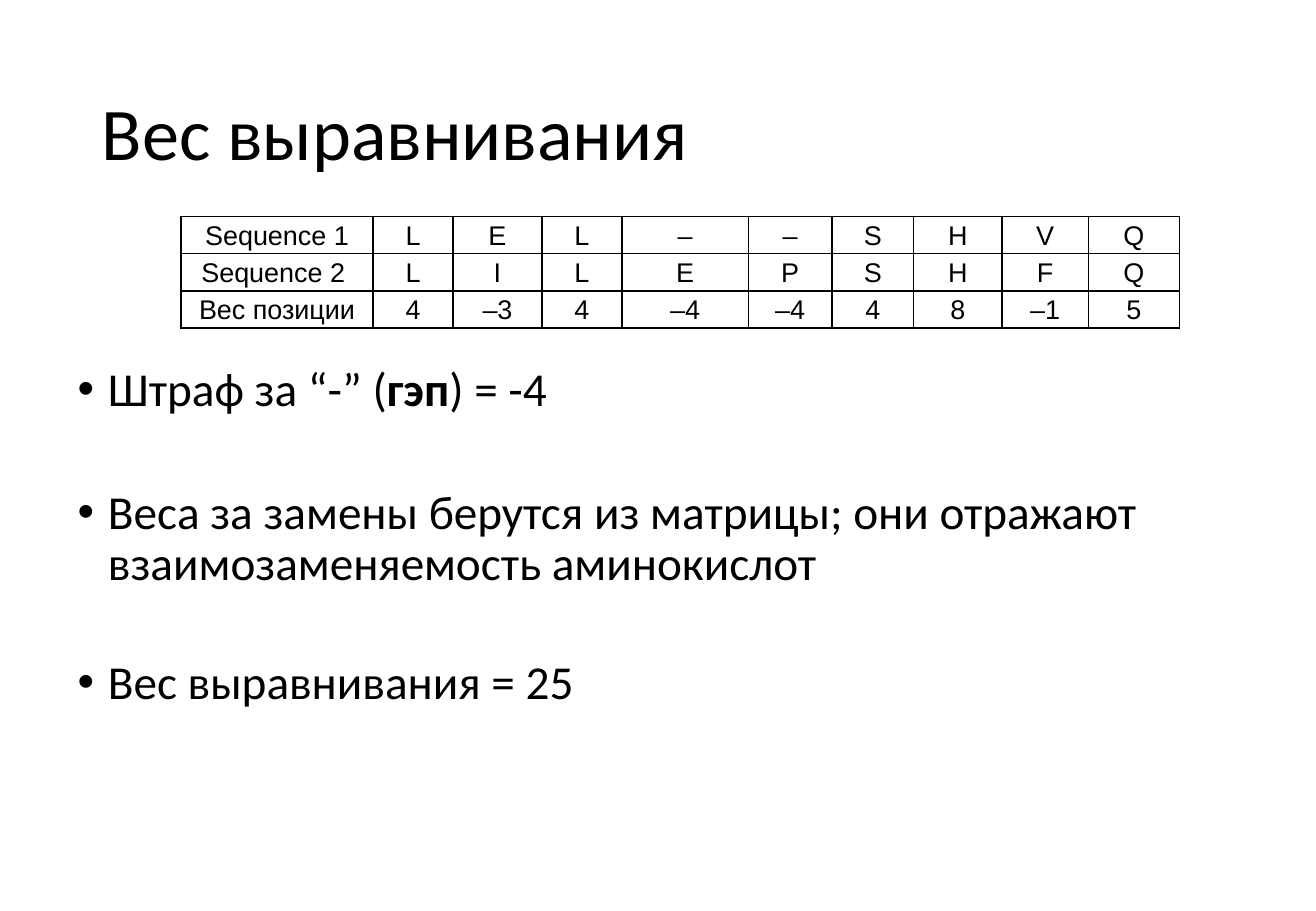
"""Build the slide about the weight of a sequence alignment."""
import dataclasses

import lxml.etree
import pptx
import pptx.dml.color
import pptx.enum.text
import pptx.oxml.ns
import pptx.util

Pt = pptx.util.Pt
qn = pptx.oxml.ns.qn


@dataclasses.dataclass(frozen=True)
class Theme:
    ink: str = "000000"
    text_font: str = "Calibri"
    table_font: str = "Arial"
    title_size: float = 44
    body_size: float = 28
    table_size: float = 16
    border_width: float = 1
    bullet_indent: float = 18


class SlideBuilder:
    def __init__(self, slide, theme):
        self.slide = slide
        self.theme = theme

    def format_runs(self, paragraph, font_name, size):
        for run in paragraph.runs:
            run.font.name = font_name
            run.font.size = Pt(size)
            run.font.color.rgb = pptx.dml.color.RGBColor.from_string(self.theme.ink)

    def add_text_frame(self, left, top, width, height):
        box = self.slide.shapes.add_textbox(Pt(left), Pt(top), Pt(width), Pt(height))
        box.text_frame.word_wrap = True
        return box.text_frame

    def add_title(self, text, *bounds):
        text_frame = self.add_text_frame(*bounds)
        text_frame.vertical_anchor = pptx.enum.text.MSO_ANCHOR.MIDDLE
        text_frame.text = text
        paragraph = text_frame.paragraphs[0]
        paragraph.line_spacing = 0.9
        self.format_runs(paragraph, self.theme.text_font, self.theme.title_size)

    def add_bullets(self, items, *bounds):
        text_frame = self.add_text_frame(*bounds)
        for index, (space_before, parts) in enumerate(items):
            paragraph = text_frame.add_paragraph() if index else text_frame.paragraphs[0]
            paragraph.line_spacing = 0.9
            paragraph.space_before = Pt(space_before)
            self.add_bullet_mark(paragraph)
            for text, bold in parts:
                run = paragraph.add_run()
                run.text = text
                run.font.bold = bold
            self.format_runs(paragraph, self.theme.text_font, self.theme.body_size)

    def add_bullet_mark(self, paragraph):
        properties = paragraph._p.get_or_add_pPr()
        indent = Pt(self.theme.bullet_indent)
        properties.set("marL", str(indent))
        properties.set("indent", str(-indent))
        lxml.etree.SubElement(properties, qn("a:buFont"), typeface="Arial")
        lxml.etree.SubElement(properties, qn("a:buChar"), char="•")

    def add_table(self, rows, column_widths, row_height, left, top):
        frame = self.slide.shapes.add_table(
            len(rows), len(column_widths), Pt(left), Pt(top),
            Pt(sum(column_widths)), Pt(row_height * len(rows)))
        table = frame.table
        table.first_row = table.horz_banding = False
        for column, width in zip(table.columns, column_widths):
            column.width = Pt(width)
        for row, texts in zip(table.rows, rows):
            row.height = Pt(row_height)
            for cell, text in zip(row.cells, texts):
                self.fill_cell(cell, text)

    def fill_cell(self, cell, text):
        cell.margin_left = cell.margin_right = Pt(5.4)
        cell.margin_top = cell.margin_bottom = 0
        cell.fill.background()
        cell.text_frame.text = text
        paragraph = cell.text_frame.paragraphs[0]
        paragraph.alignment = pptx.enum.text.PP_ALIGN.CENTER
        paragraph.line_spacing = 1.15
        self.format_runs(paragraph, self.theme.table_font, self.theme.table_size)
        properties = cell._tc.get_or_add_tcPr()
        for position, side in enumerate(("lnL", "lnR", "lnT", "lnB")):
            line = lxml.etree.Element(qn("a:" + side), w=str(Pt(self.theme.border_width)))
            fill = lxml.etree.SubElement(line, qn("a:solidFill"))
            lxml.etree.SubElement(fill, qn("a:srgbClr"), val=self.theme.ink)
            properties.insert(position, line)


def main():
    presentation = pptx.Presentation()
    presentation.slide_width = Pt(780)
    presentation.slide_height = Pt(540)
    slide = presentation.slides.add_slide(presentation.slide_layouts[6])
    builder = SlideBuilder(slide, Theme())
    builder.add_title("Вес выравнивания", 53.3, 28.8, 672.5, 104.4)
    builder.add_bullets([
        (0, [("Штраф за “-” (", False), ("гэп", True), (") = -4", False)]),
        (43, [("Веса за замены берутся из матрицы; "
               "они отражают взаимозаменяемость аминокислот", False)]),
        (40, [("Вес выравнивания = 25", False)]),
    ], 38.9, 213.1, 702, 269.3)
    alignment_rows = [
        ["Sequence 1", *"LEL––SHVQ"],
        ["Sequence 2 ", *"LILEPSHFQ"],
        ["Вес позиции", "4", "–3", "4", "–4", "–4", "4", "8", "–1", "5"],
    ]
    column_widths = [113.8, 47.5, 52.6, 47.5, 74.9, 49.7, 48.2, 52.6, 51.1, 54]
    builder.add_table(alignment_rows, column_widths, 20.5, 107.3, 128.2)
    presentation.save("out.pptx")


if __name__ == "__main__":
    main()
